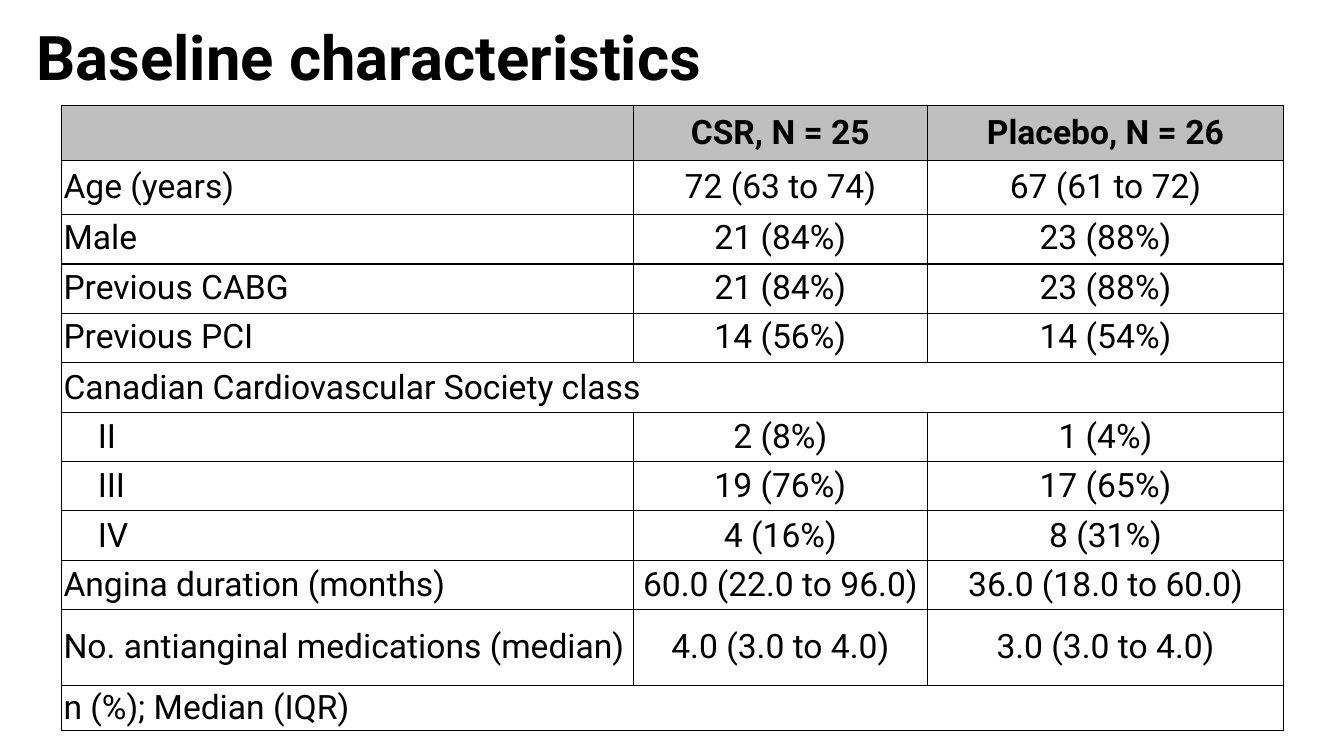
from lxml.etree import SubElement
from pptx import Presentation
from pptx.dml.color import RGBColor as RGB
from pptx.enum.text import MSO_ANCHOR as Anchor, PP_ALIGN as Align
from pptx.oxml.ns import qn
from pptx.util import Inches, Pt

THEME = {
    "font": "Roboto",
    "ink": "000000",
    "header": "BFBFBF",
    "title_size": 44,
    "table_size": 24,
    "border": 1,
}

TITLE = "Baseline characteristics"
COLUMN_WIDTHS = (5.67, 2.92, 3.53)
LABEL_INDENT, CLASS_INDENT = 0.02, 0.36

HEADER = {"height": 0.54, "top": 0.07, "before": 5.2}
AGE = {"height": 0.54, "top": 0.07, "before": 5}
HISTORY = {"height": 0.49, "top": 0.04, "before": 3.2}
CLASS = {"height": 0.49, "top": 0.05, "before": 3.2}
DURATION = {"height": 0.49, "top": 0.05, "before": 3.3}
MEDICATION = {"height": 0.75, "top": 0.18, "before": 13}
FOOTNOTE = {"height": 0.45, "top": 0.03, "before": 2}

ROWS = [
    (HEADER, LABEL_INDENT, ("", "CSR, N = 25", "Placebo, N = 26")),
    (AGE, LABEL_INDENT, ("Age (years)", "72 (63 to 74)", "67 (61 to 72)")),
    (HISTORY, LABEL_INDENT, ("Male", "21 (84%)", "23 (88%)")),
    (HISTORY, LABEL_INDENT, ("Previous CABG", "21 (84%)", "23 (88%)")),
    (HISTORY, LABEL_INDENT, ("Previous PCI", "14 (56%)", "14 (54%)")),
    (CLASS, LABEL_INDENT, ("Canadian Cardiovascular Society class",)),
    (CLASS, CLASS_INDENT, ("II", "2 (8%)", "1 (4%)")),
    (CLASS, CLASS_INDENT, ("III", "19 (76%)", "17 (65%)")),
    (CLASS, CLASS_INDENT, ("IV", "4 (16%)", "8 (31%)")),
    (DURATION, LABEL_INDENT,
     ("Angina duration (months)", "60.0 (22.0 to 96.0)", "36.0 (18.0 to 60.0)")),
    (MEDICATION, LABEL_INDENT,
     ("No. antianginal medications (median)", "4.0 (3.0 to 4.0)", "3.0 (3.0 to 4.0)")),
    (FOOTNOTE, LABEL_INDENT, ("n (%); Median (IQR)",)),
]


def write(paragraph, text, size, bold, before, indent):
    paragraph.text = text
    paragraph.space_before = Pt(before)
    paragraph.alignment = Align.CENTER if indent is None else Align.LEFT
    if indent is not None:
        properties = paragraph._p.get_or_add_pPr()
        properties.set("marL", str(Inches(indent)))
        properties.set("indent", "0")
    font = paragraph.font
    font.name, font.size, font.bold = THEME["font"], Pt(size), bold
    font.color.rgb = RGB.from_string(THEME["ink"])


def set_insets(holder, top):
    holder.margin_left = holder.margin_right = holder.margin_bottom = 0
    holder.margin_top = Inches(top)
    holder.vertical_anchor = Anchor.TOP


def add_borders(cell):
    properties = cell._tc.get_or_add_tcPr()
    for side in ("lnL", "lnR", "lnT", "lnB"):
        line = SubElement(properties, qn(f"a:{side}"), w=str(Pt(THEME["border"])))
        paint = SubElement(line, qn("a:solidFill"))
        SubElement(paint, qn("a:srgbClr"), val=THEME["ink"])


def add_title(slide):
    title = slide.shapes.add_textbox(Inches(0.35), Inches(0.18), Inches(8.83), Inches(0.76))
    frame = title.text_frame
    frame.word_wrap = True
    set_insets(frame, 0.01)
    write(frame.paragraphs[0], TITLE, THEME["title_size"], True, 1, 0.01)


def add_characteristics(slide):
    height = sum(layout["height"] for layout, _, _ in ROWS)
    table = slide.shapes.add_table(
        len(ROWS), len(COLUMN_WIDTHS), Inches(0.61), Inches(1.05),
        Inches(sum(COLUMN_WIDTHS)), Inches(height)).table
    table.first_row = table.horz_banding = False
    for column, width in zip(table.columns, COLUMN_WIDTHS):
        column.width = Inches(width)

    for r, (layout, label_indent, texts) in enumerate(ROWS):
        table.rows[r].height = Inches(layout["height"])
        is_header = layout is HEADER
        for c in range(len(COLUMN_WIDTHS)):
            cell = table.cell(r, c)
            set_insets(cell, layout["top"])
            add_borders(cell)
            if is_header:
                cell.fill.solid()
                cell.fill.fore_color.rgb = RGB.from_string(THEME["header"])
            else:
                cell.fill.background()
            if c < len(texts):
                write(cell.text_frame.paragraphs[0], texts[c], THEME["table_size"],
                      is_header, layout["before"], label_indent if c == 0 else None)
        if len(texts) == 1:
            table.cell(r, 0).merge(table.cell(r, len(COLUMN_WIDTHS) - 1))


def main():
    deck = Presentation()
    deck.slide_width, deck.slide_height = Inches(13.33), Inches(7.5)
    slide = deck.slides.add_slide(deck.slide_layouts[6])
    add_characteristics(slide)
    add_title(slide)
    deck.save("out.pptx")


if __name__ == "__main__":
    main()
